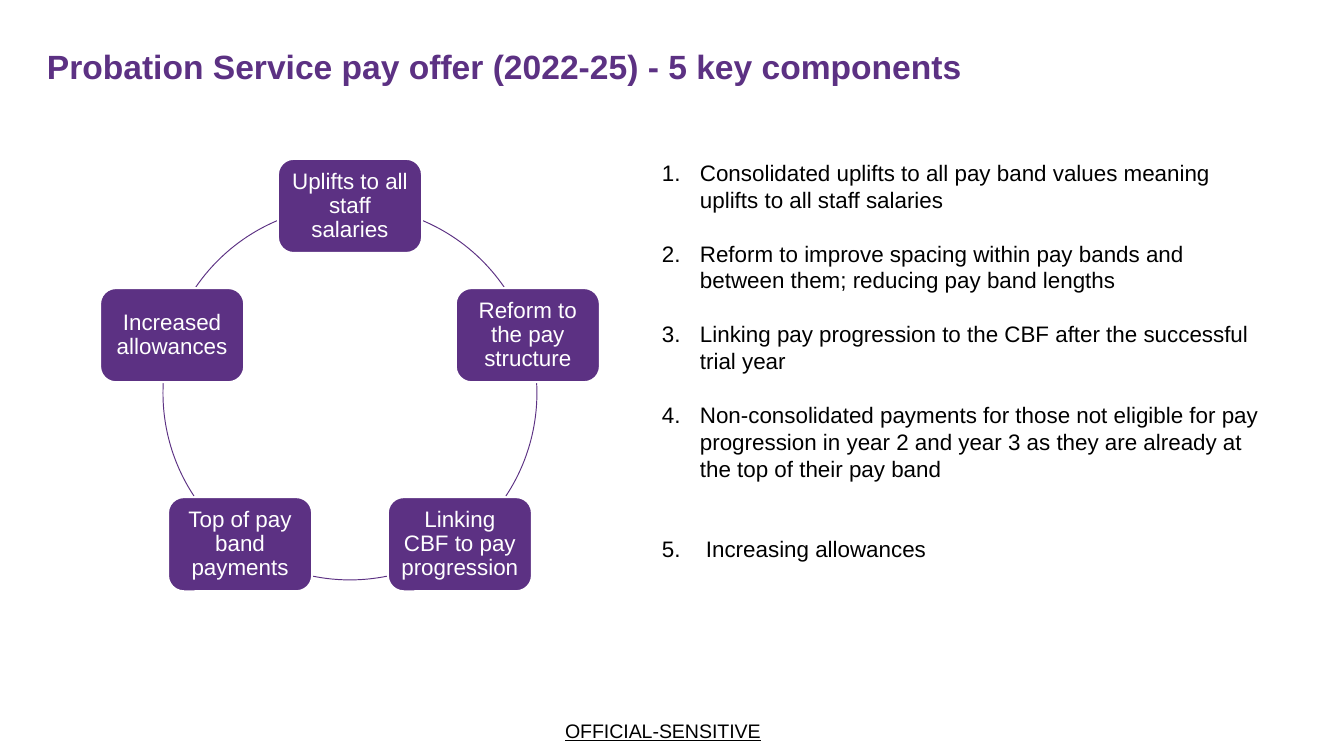
from math import cos, radians, sin

from pptx import Presentation
from pptx.dml.color import RGBColor
from pptx.enum.shapes import MSO_SHAPE
from pptx.enum.text import MSO_ANCHOR, PP_ALIGN
from pptx.oxml.ns import qn
from pptx.util import Pt

TITLE = "Probation Service pay offer (2022-25) - 5 key components"
MARKING = "OFFICIAL-SENSITIVE"
COMPONENTS = [
    "Uplifts to all staff salaries",
    "Reform to the pay structure",
    "Linking CBF to pay progression",
    "Top of pay band payments",
    "Increased allowances",
]
# text, space before in points, hanging indent in px
DETAILS = [
    ("Consolidated uplifts to all pay band values meaning uplifts to all staff salaries", 0, 38),
    ("Reform to improve spacing within pay bands and between them; reducing pay band lengths", 14.4, 38),
    ("Linking pay progression to the CBF after the successful trial year", 14.4, 38),
    ("Non-consolidated payments for those not eligible for pay progression in year 2 "
     "and year 3 as they are already at the top of their pay band", 14.4, 38),
    ("Increasing allowances", 28.8, 44),
]
# start and end of each visible piece of the ring, degrees clockwise from 3 o'clock
RING_ARCS = [(292.6, 325.6), (356.9, 33.5), (78.6, 101.4), (146.5, 183.1), (214.4, 247.4)]

PURPLE = RGBColor(0x5C, 0x31, 0x83)
WHITE = RGBColor(0xFF, 0xFF, 0xFF)
BLACK = RGBColor(0x00, 0x00, 0x00)
FONT = "Arial"
CENTER = PP_ALIGN.CENTER
MIDDLE = MSO_ANCHOR.MIDDLE
ROUNDED = MSO_SHAPE.ROUNDED_RECTANGLE
ARC = MSO_SHAPE.ARC

SCALE = 914400 / 134.4
RING_X, RING_Y, RING_RADIUS = 350, 393, 187
NODE_W, NODE_H = 144, 94


def px(length):
    return round(length * SCALE)


def box(*lengths):
    return [px(length) for length in lengths]


def set_margins(frame, margin):
    frame.margin_left = frame.margin_right = px(margin)
    frame.margin_top = frame.margin_bottom = px(margin)


def style(paragraph, size, color):
    font = paragraph.font
    font.name, font.size, font.color.rgb = FONT, Pt(size), color
    return font


def add_text_frame(slide, *place):
    frame = slide.shapes.add_textbox(*box(*place)).text_frame
    frame.word_wrap = True
    set_margins(frame, 0)
    return frame


def add_title(slide):
    frame = add_text_frame(slide, 47, 34, 1184, 70)
    frame.vertical_anchor = MIDDLE
    frame.text = TITLE
    frame.paragraphs[0].line_spacing = 0.9
    style(frame.paragraphs[0], 18, PURPLE).bold = True


def add_marking(slide):
    frame = add_text_frame(slide, 550, 719, 226, 31)
    frame.text = MARKING
    frame.paragraphs[0].alignment = CENTER
    style(frame.paragraphs[0], 10.5, BLACK).underline = True


def add_ring(slide):
    for start, end in RING_ARCS:
        arc = slide.shapes.add_shape(ARC, *box(
            RING_X - RING_RADIUS, RING_Y - RING_RADIUS, 2 * RING_RADIUS, 2 * RING_RADIUS))
        arc.shadow.inherit = False
        # Angles are stored in 60000ths of a degree, adjustments in 100000ths
        arc.adjustments[0] = start * 0.6
        arc.adjustments[1] = end * 0.6
        arc.fill.background()
        arc.line.color.rgb = PURPLE
        arc.line.width = Pt(0.5)

    for i, component in enumerate(COMPONENTS):
        angle = radians(-90 + i * 360 / len(COMPONENTS))
        left = RING_X + RING_RADIUS * cos(angle) - NODE_W / 2
        top = RING_Y + RING_RADIUS * sin(angle) - NODE_H / 2
        node = slide.shapes.add_shape(ROUNDED, *box(left, top, NODE_W, NODE_H))
        node.shadow.inherit = False
        node.fill.solid()
        node.fill.fore_color.rgb = PURPLE
        node.line.color.rgb = WHITE
        node.line.width = Pt(1)
        frame = node.text_frame
        frame.word_wrap = True
        frame.vertical_anchor = MIDDLE
        set_margins(frame, 7)
        frame.text = component
        paragraph = frame.paragraphs[0]
        paragraph.alignment = CENTER
        paragraph.line_spacing = 0.9
        style(paragraph, 12, WHITE)


def number(paragraph, indent):
    properties = paragraph._p.get_or_add_pPr()
    properties.set("marL", str(px(indent)))
    properties.set("indent", str(-px(indent)))
    bullet = properties.makeelement(qn("a:buAutoNum"), {"type": "arabicPeriod"})
    properties.append(bullet)


def add_details(slide):
    frame = add_text_frame(slide, 662, 159, 601, 480)
    frame.text = "\n".join(detail for detail, _, _ in DETAILS)
    for paragraph, (_, gap, indent) in zip(frame.paragraphs, DETAILS):
        number(paragraph, indent)
        paragraph.line_spacing = Pt(14.4)
        paragraph.space_before = Pt(gap)
        style(paragraph, 12, BLACK)


def main():
    presentation = Presentation()
    presentation.slide_width, presentation.slide_height = box(1344, 756)
    slide = presentation.slides.add_slide(presentation.slide_layouts[6])
    add_marking(slide)
    add_title(slide)
    add_details(slide)
    add_ring(slide)
    presentation.save("out.pptx")


if __name__ == "__main__":
    main()
